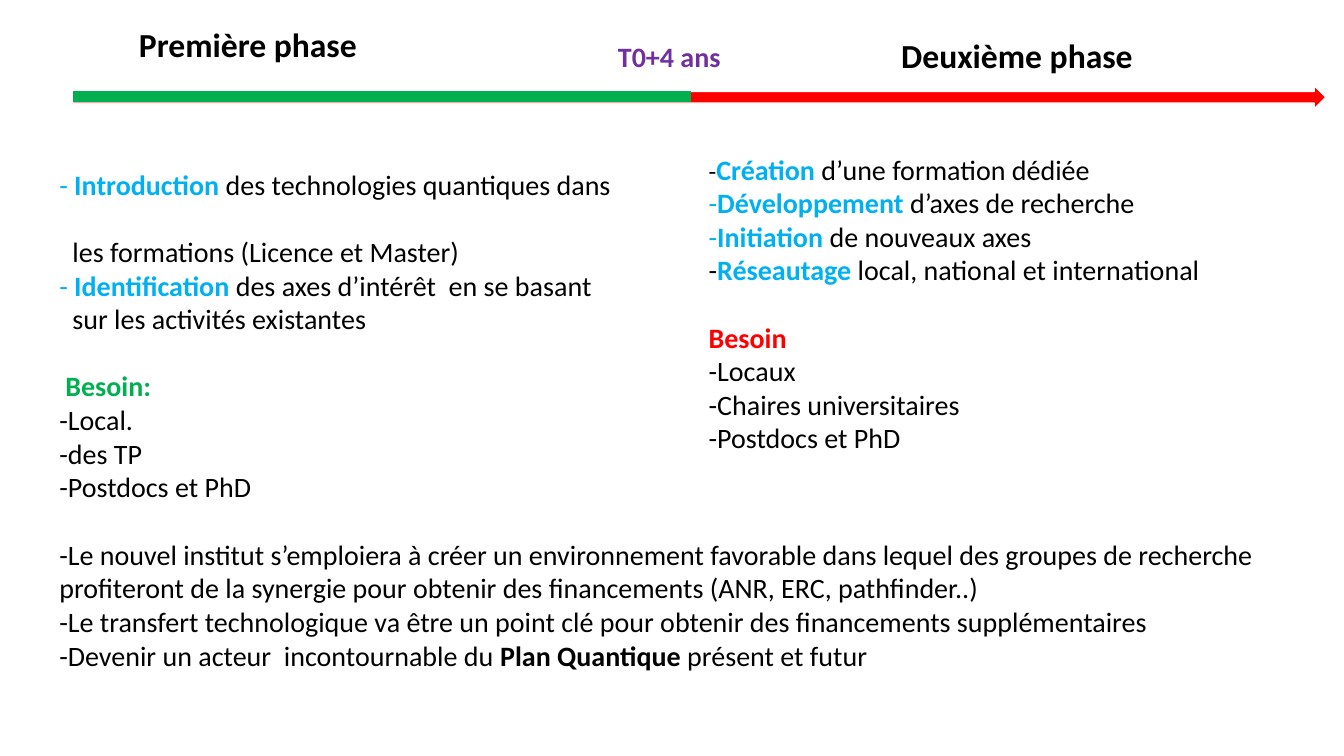
from dataclasses import dataclass

from lxml import etree
from pptx import Presentation
from pptx.dml.color import RGBColor
from pptx.enum.shapes import MSO_CONNECTOR, MSO_SHAPE
from pptx.oxml.ns import qn
from pptx.util import Pt

RIGHT_ARROW = MSO_SHAPE.RIGHT_ARROW
STRAIGHT = MSO_CONNECTOR.STRAIGHT
EMU_PER_PX = 9144


@dataclass(frozen=True)
class Theme:
    font: str = "Calibri"
    title: int = 24
    body: int = 20
    small: int = 18
    line_gap: int = 24
    black: str = "000000"
    white: str = "FFFFFF"
    blue: str = "00B0F0"
    green: str = "00B050"
    red: str = "FF0000"
    purple: str = "7030A0"


@dataclass(frozen=True)
class Span:
    text: str
    color: str = Theme.black
    bold: bool = False
    size: int = Theme.body


@dataclass(frozen=True)
class Para:
    spans: tuple
    indent: int = 0
    gap_after: bool = False


THEME = Theme()


def px(length):
    return length * EMU_PER_PX


def rgb(color):
    return RGBColor.from_string(color)


def plain(text, **layout):
    return Para((Span(text),), **layout)


def heading(text, color, size=THEME.body, **layout):
    return Para((Span(text, color, True, size),), **layout)


def action(dash, keyword, rest, **layout):
    return Para((dash, Span(keyword, THEME.blue, True), Span(rest)), **layout)


def add_text(page, box, paras):
    frame = page.shapes.add_textbox(*map(px, box)).text_frame
    frame.word_wrap = True
    for index, para in enumerate(paras):
        paragraph = frame.paragraphs[0] if index == 0 else frame.add_paragraph()
        paragraph.font.name = THEME.font
        if para.indent:
            paragraph._p.get_or_add_pPr().set("marL", str(px(para.indent)))
        if para.gap_after:
            paragraph.space_after = Pt(THEME.line_gap)
        for span in para.spans:
            run = paragraph.add_run()
            run.text = span.text
            run.font.size = Pt(span.size)
            run.font.bold = span.bold
            run.font.color.rgb = rgb(span.color)


def add_timeline(page, box):
    left, top, width, height = box
    arrow = page.shapes.add_shape(RIGHT_ARROW, *map(px, box))
    arrow.shadow.inherit = False
    arrow.fill.solid()
    arrow.fill.fore_color.rgb = rgb(THEME.red)
    arrow.line.color.rgb = rgb(THEME.white)
    arrow.line.width = Pt(1)

    middle = top + height // 2
    first_phase = page.shapes.add_connector(
        STRAIGHT, px(left), px(middle), px(left + 613), px(middle))
    first_phase.line.color.rgb = rgb(THEME.green)
    first_phase.line.width = Pt(7.5)
    etree.SubElement(first_phase._element.spPr, qn("a:effectLst"))

    add_text(page, (left + 56, top - 66, 301, 50),
             [heading("Première phase", THEME.black, THEME.title)])
    add_text(page, (left + 531, top - 51, 142, 44),
             [heading("T0+4 ans", THEME.purple)])
    add_text(page, (left + 812, top - 55, 266, 50),
             [heading("Deuxième phase", THEME.black, THEME.title)])


def add_first_phase(page, box):
    dash = Span("- ", THEME.blue)
    add_text(page, box, [
        action(dash, "Introduction ", "des technologies quantiques dans", gap_after=True),
        plain("les formations (Licence et Master)", indent=13),
        action(dash, "Identification ", "des axes d’intérêt  en se basant"),
        plain("sur les activités existantes", indent=13, gap_after=True),
        heading("Besoin:", THEME.green, indent=6),
        *map(plain, ("-Local.", "-des TP", "-Postdocs et PhD")),
    ])


def add_second_phase(page, box):
    blue_dash = Span("-", THEME.blue)
    add_text(page, box, [
        action(Span("-", size=THEME.small), "Création", " d’une formation dédiée"),
        action(blue_dash, "Développement ", "d’axes de recherche"),
        action(blue_dash, "Initiation ", "de nouveaux axes"),
        action(Span("-"), "Réseautage ", "local, national et international", gap_after=True),
        heading("Besoin", THEME.red),
        *map(plain, ("-Locaux", "-Chaires universitaires", "-Postdocs et PhD")),
    ])


def add_outlook(page, box):
    add_text(page, box, [
        plain("-Le nouvel institut s’emploiera à créer un environnement favorable "
              "dans lequel des groupes de recherche profiteront de la synergie "
              "pour obtenir des financements (ANR, ERC, pathfinder..)"),
        plain("-Le transfert technologique va être un point clé pour obtenir "
              "des financements supplémentaires"),
        Para((Span("-Devenir un acteur  incontournable du "),
              Span("Plan Quantique", bold=True),
              Span(" présent et futur"))),
    ])


def main():
    deck = Presentation()
    deck.slide_width, deck.slide_height = px(1333), px(750)
    page = deck.slides.add_slide(deck.slide_layouts[6])
    add_timeline(page, (72, 85, 1243, 23))
    add_first_phase(page, (49, 161, 573, 313))
    add_second_phase(page, (693, 146, 526, 313))
    add_outlook(page, (49, 528, 1216, 145))
    deck.save("out.pptx")


if __name__ == "__main__":
    main()
